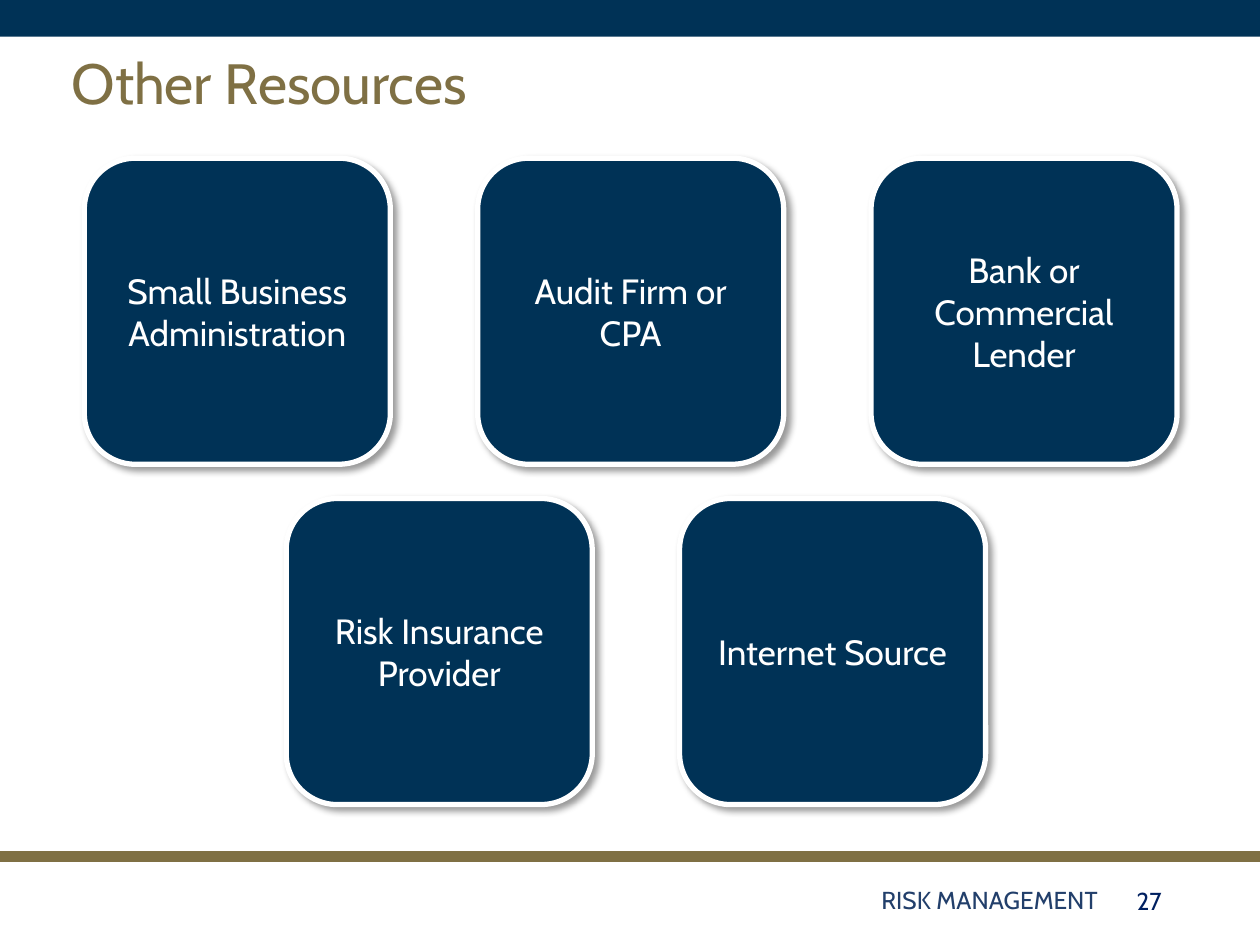
import pptx
import pptx.util
import pptx.dml.color
import pptx.enum.shapes
import pptx.enum.text
import pptx.oxml
import pptx.oxml.ns

Cm, Pt = pptx.util.Cm, pptx.util.Pt
Shape = pptx.enum.shapes.MSO_SHAPE
Align = pptx.enum.text.PP_ALIGN
Anchor = pptx.enum.text.MSO_ANCHOR

NAVY, GOLD, WHITE = "003256", "7F7044", "FFFFFF"
FONT = "Cabin"
TITLE = "Other Resources"
# left and top of each row in cm, then its cards
ROWS = [
    (1.7, 3.19, ["Small Business Administration", "Audit Firm or CPA",
                 "Bank or Commercial Lender"]),
    (5.77, 10.05, ["Risk Insurance Provider", "Internet Source"]),
]
SIDE, PITCH = 6.17, 7.93
# text, colour, left, top, width in cm
FOOT = [
    ("RISK MANAGEMENT", "223F6B", 10.52, 17.63, 11.86),
    ("27", "002060", 22.43, 17.65, 1.24),
]
SHADOW = (
    '<a:effectLst %s><a:outerShdw blurRad="50800" dist="38100" dir="2700000"'
    ' algn="tl" rotWithShape="0"><a:srgbClr val="000000">'
    '<a:alpha val="40000"/></a:srgbClr></a:outerShdw></a:effectLst>'
) % pptx.oxml.ns.nsdecls("a")


def color(code):
    return pptx.dml.color.RGBColor.from_string(code)


def write(shape, text, size, code, align):
    frame = shape.text_frame
    frame.word_wrap = True
    frame.auto_size = pptx.enum.text.MSO_AUTO_SIZE.NONE
    frame.vertical_anchor = Anchor.MIDDLE
    para = frame.paragraphs[0]
    para.alignment = align
    run = para.add_run()
    run.text = text
    run.font.name = FONT
    run.font.size = Pt(size)
    run.font.color.rgb = color(code)
    return para


def block(slide, kind, left, top, width, height):
    shape = slide.shapes.add_shape(kind, Cm(left), Cm(top), Cm(width), Cm(height))
    shape.shadow.inherit = False
    shape.fill.solid()
    shape.fill.fore_color.rgb = color(NAVY)
    shape.line.fill.background()
    return shape


def card(slide, text, left, top):
    shape = block(slide, Shape.ROUNDED_RECTANGLE, left, top, SIDE, SIDE)
    shape.line.color.rgb = color(WHITE)
    shape.line.width = Pt(3)
    props = shape._element.spPr
    blank = props.find(pptx.oxml.ns.qn("a:effectLst"))
    props.replace(blank, pptx.oxml.parse_xml(SHADOW))
    write(shape, text, 20, WHITE, Align.CENTER)


def rule(slide, top):
    line = slide.shapes.add_connector(
        pptx.enum.shapes.MSO_CONNECTOR.STRAIGHT, 0, Cm(top), Cm(25.4), Cm(top))
    line.line.color.rgb = color(GOLD)
    line.line.width = Pt(6)
    pptx.oxml.ns.qn("a:effectLst")
    line._element.spPr.append(pptx.oxml.parse_xml(
        "<a:effectLst %s/>" % pptx.oxml.ns.nsdecls("a")))


def main():
    deck = pptx.Presentation()
    deck.slide_width, deck.slide_height = Cm(25.4), Cm(19.05)
    slide = deck.slides.add_slide(deck.slide_layouts[5])

    block(slide, Shape.RECTANGLE, 0, 0, 25.4, 0.74)
    rule(slide, 17.27)

    title = slide.shapes.title
    title.left, title.top = Cm(1.19), Cm(0.97)
    title.width, title.height = Cm(21.89), Cm(1.55)
    write(title, TITLE, 32.4, GOLD, Align.LEFT).line_spacing = 0.9

    for left, top, names in ROWS:
        for i, name in enumerate(names):
            card(slide, name, left + i * PITCH, top)

    for text, code, left, top, width in FOOT:
        box = slide.shapes.add_textbox(Cm(left), Cm(top), Cm(width), Cm(1.02))
        write(box, text, 14, code, Align.RIGHT)

    deck.save("out.pptx")


if __name__ == "__main__":
    main()
